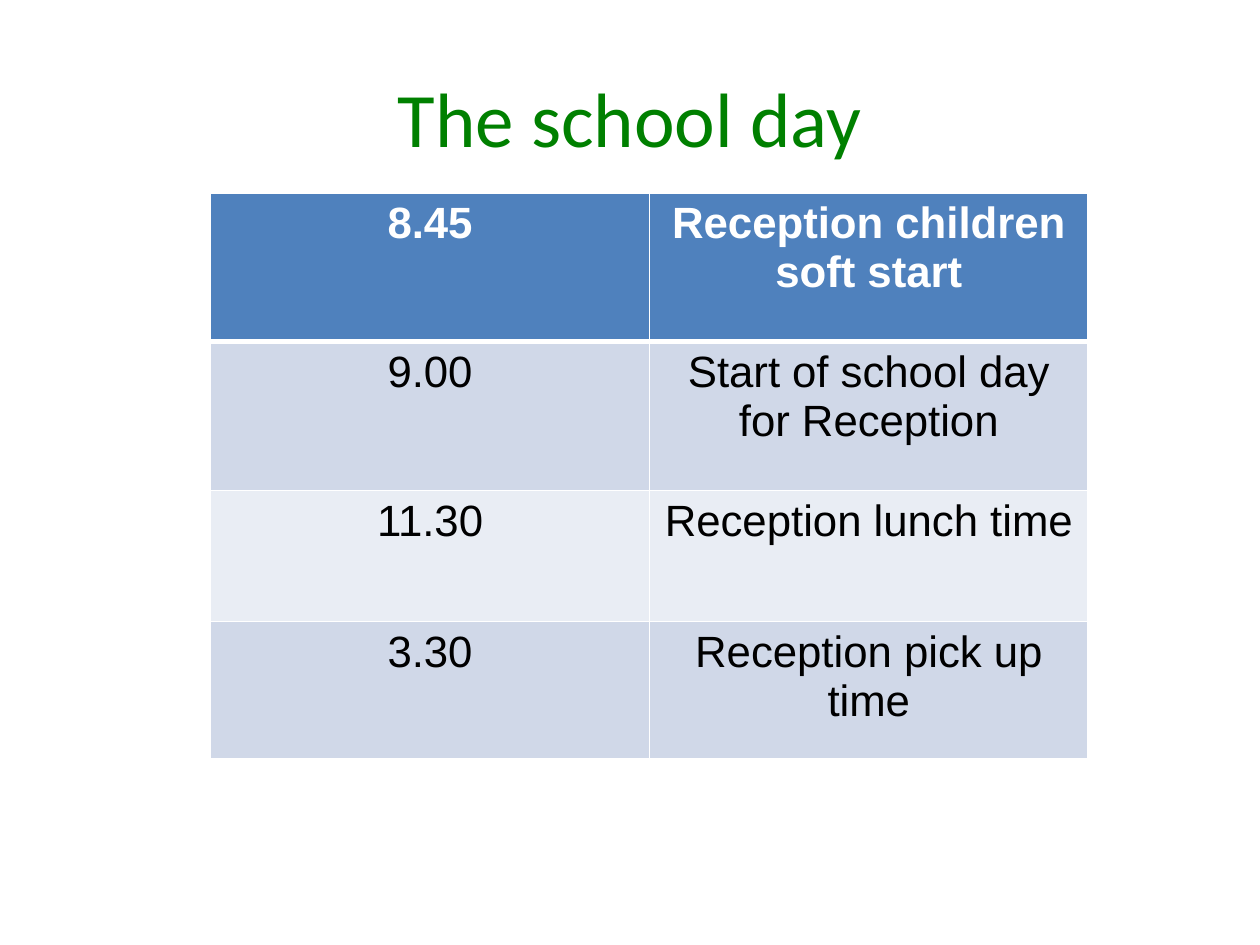
from dataclasses import dataclass
from lxml.etree import SubElement
from pptx import Presentation
from pptx.dml.color import RGBColor
from pptx.enum.text import MSO_ANCHOR, PP_ALIGN
from pptx.oxml.ns import qn
from pptx.util import Pt


@dataclass(frozen=True)
class Theme:
    title: str = "008000"
    head: str = "4F81BD"
    bands: tuple = ("D0D8E8", "E9EDF4")
    light: str = "FFFFFF"
    dark: str = "000000"
    title_font: str = "Calibri"
    body_font: str = "Arial"
    title_size: int = 44
    body_size: int = 25
    line: int = 1
    rule: int = 3


class Page:
    def __init__(self, slide, theme):
        self.slide = slide
        self.theme = theme

    def style(self, para, name, size, color, bold=False):
        para.alignment = PP_ALIGN.CENTER
        font = para.font
        font.name, font.size, font.bold = name, Pt(size), bold
        font.color.rgb = RGBColor.from_string(color)

    def title(self, text, left, top, width, height):
        box = self.slide.shapes.add_textbox(Pt(left), Pt(top), Pt(width), Pt(height))
        frame = box.text_frame
        frame.word_wrap = True
        frame.vertical_anchor = MSO_ANCHOR.MIDDLE
        frame.text = text
        theme = self.theme
        self.style(frame.paragraphs[0], theme.title_font, theme.title_size, theme.title)

    def border(self, cell, side, width):
        props = cell._tc.get_or_add_tcPr()
        line = SubElement(props, qn(f"a:ln{side}"), w=str(Pt(width)))
        fill = SubElement(line, qn("a:solidFill"))
        SubElement(fill, qn("a:srgbClr"), val=self.theme.light)

    def cell(self, cell, text, row):
        theme = self.theme
        head = row == 0
        widths = {
            "L": theme.line,
            "R": theme.line,
            "T": theme.rule if row == 1 else theme.line,
            "B": theme.rule if head else theme.line,
        }
        for side, width in widths.items():
            self.border(cell, side, width)
        color = theme.head if head else theme.bands[(row - 1) % 2]
        cell.fill.solid()
        cell.fill.fore_color.rgb = RGBColor.from_string(color)
        cell.text = text
        ink = theme.light if head else theme.dark
        self.style(cell.text_frame.paragraphs[0], theme.body_font, theme.body_size, ink, head)

    def table(self, rows, left, top, width, heights):
        count = len(rows[0])
        frame = self.slide.shapes.add_table(
            len(rows), count, Pt(left), Pt(top), Pt(width), Pt(sum(heights))
        )
        grid = frame.table
        for col in grid.columns:
            col.width = Pt(width / count)
        for num, (texts, height) in enumerate(zip(rows, heights)):
            grid.rows[num].height = Pt(height)
            for pos, text in enumerate(texts):
                self.cell(grid.cell(num, pos), text, num)


def main():
    deck = Presentation()
    deck.slide_width, deck.slide_height = Pt(720), Pt(540)
    page = Page(deck.slides.add_slide(deck.slide_layouts[6]), Theme())
    page.title("The school day", 36, 21.6, 648, 90)
    times = [
        ("8.45", "Reception children soft start"),
        ("9.00", "Start of school day for Reception"),
        ("11.30", "Reception lunch time"),
        ("3.30", "Reception pick up time"),
    ]
    page.table(times, 120.4, 110.2, 501.4, (85, 85, 75, 78.5))
    deck.save("out.pptx")


if __name__ == "__main__":
    main()
